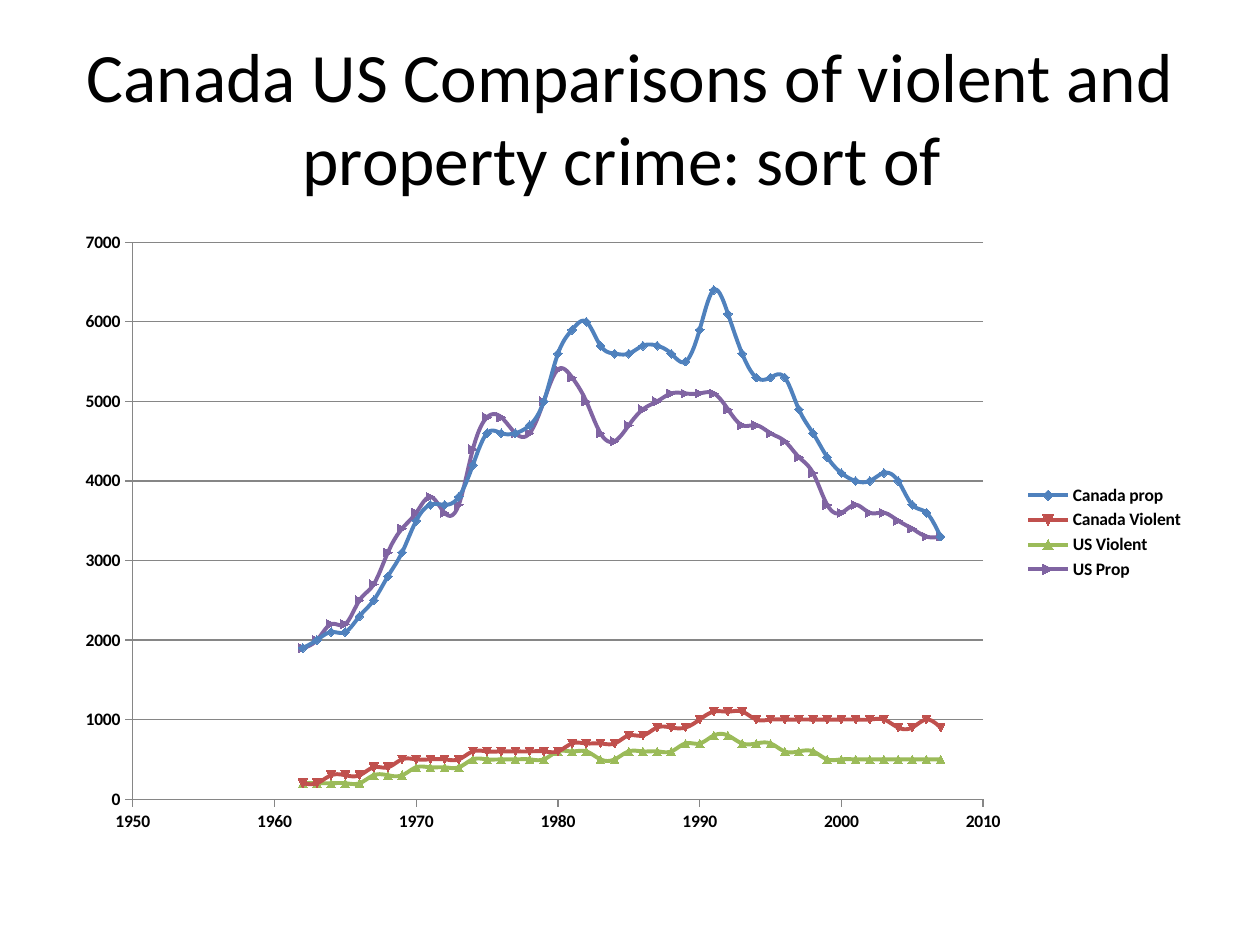
import pptx
import pptx.chart.data
import pptx.dml.color
import pptx.enum.chart
import pptx.enum.text
import pptx.util
from lxml import etree

WIDTH, HEIGHT = pptx.util.Inches(10), pptx.util.Inches(7.5)
MARGIN = 0.05
FONT = "Calibri"
FIRST_YEAR = 1962
CRIME_RATES = {
    "Canada prop": ("4F81BD", [
        1900, 2000, 2100, 2100, 2300, 2500, 2800, 3100, 3500, 3700, 3700, 3800,
        4200, 4600, 4600, 4600, 4700, 5000, 5600, 5900, 6000, 5700, 5600, 5600,
        5700, 5700, 5600, 5500, 5900, 6400, 6100, 5600, 5300, 5300, 5300, 4900,
        4600, 4300, 4100, 4000, 4000, 4100, 4000, 3700, 3600, 3300]),
    "Canada Violent": ("C0504D", [
        200, 200, 300, 300, 300, 400, 400, 500, 500, 500, 500, 500,
        600, 600, 600, 600, 600, 600, 600, 700, 700, 700, 700, 800,
        800, 900, 900, 900, 1000, 1100, 1100, 1100, 1000, 1000, 1000, 1000,
        1000, 1000, 1000, 1000, 1000, 1000, 900, 900, 1000, 900]),
    "US Violent": ("9BBB59", [
        200, 200, 200, 200, 200, 300, 300, 300, 400, 400, 400, 400,
        500, 500, 500, 500, 500, 500, 600, 600, 600, 500, 500, 600,
        600, 600, 600, 700, 700, 800, 800, 700, 700, 700, 600, 600,
        600, 500, 500, 500, 500, 500, 500, 500, 500, 500]),
    "US Prop": ("8064A2", [
        1900, 2000, 2200, 2200, 2500, 2700, 3100, 3400, 3600, 3800, 3600, 3700,
        4400, 4800, 4800, 4600, 4600, 5000, 5400, 5300, 5000, 4600, 4500, 4700,
        4900, 5000, 5100, 5100, 5100, 5100, 4900, 4700, 4700, 4600, 4500, 4300,
        4100, 3700, 3600, 3700, 3600, 3600, 3500, 3400, 3300, 3300]),
}


def paint(target, color):
    target.solid()
    target.fore_color.rgb = pptx.dml.color.RGBColor.from_string(color)


def add_text(slide, text, left, top, width, height, size, color):
    shape = slide.shapes.add_textbox(
        int(left * WIDTH), int(top * HEIGHT), int(width * WIDTH), int(height * HEIGHT))
    frame = shape.text_frame
    frame.word_wrap = True
    frame.vertical_anchor = pptx.enum.text.MSO_ANCHOR.MIDDLE
    paragraph = frame.paragraphs[0]
    paragraph.alignment = pptx.enum.text.PP_ALIGN.CENTER
    run = paragraph.add_run()
    run.text = text
    run.font.name = FONT
    run.font.size = pptx.util.Pt(size)
    paint(run.font.fill, color)


presentation = pptx.Presentation()
presentation.slide_width, presentation.slide_height = WIDTH, HEIGHT
slide = presentation.slides.add_slide(presentation.slide_layouts[6])

add_text(slide, "Canada US Comparisons of violent and property crime: sort of ",
         left=MARGIN, top=0.04, width=1 - 2 * MARGIN, height=1 / 6,
         size=39.6, color="000000")

data = pptx.chart.data.XyChartData(number_format="General")
for name, (color, rates) in CRIME_RATES.items():
    points = data.add_series(name)
    for year, rate in enumerate(rates, FIRST_YEAR):
        points.add_data_point(year, rate)

chart = slide.shapes.add_chart(
    pptx.enum.chart.XL_CHART_TYPE.XY_SCATTER_SMOOTH,
    int(MARGIN * WIDTH), int(HEIGHT * 7 / 30),
    int((1 - 2 * MARGIN) * WIDTH), int(0.66 * HEIGHT), data).chart
chart.has_title = False
chart.font.name = FONT
chart.font.size = pptx.util.Pt(10)
chart.font.bold = True
paint(chart.font.fill, "000000")
chart.has_legend = True
chart.legend.position = pptx.enum.chart.XL_LEGEND_POSITION.RIGHT
chart.legend.include_in_layout = False

plot = chart.plots[0]
plot.vary_by_categories = False
for series, (color, rates) in zip(plot.series, CRIME_RATES.values()):
    paint(series.format.line.fill, color)
    series.format.line.width = pptx.util.Pt(2.25)
    paint(series.marker.format.fill, color)
    paint(series.marker.format.line.fill, color)

for axis, low, high, step in ((chart.category_axis, 1950, 2010, 10),
                              (chart.value_axis, 0, 7000, 1000)):
    axis.minimum_scale, axis.maximum_scale, axis.major_unit = low, high, step
    axis.major_tick_mark = pptx.enum.chart.XL_TICK_MARK.OUTSIDE
    axis.minor_tick_mark = pptx.enum.chart.XL_TICK_MARK.NONE
    axis.tick_labels.number_format = "General"
    axis.tick_labels.number_format_is_linked = False
    paint(axis.format.line.fill, "868686")
    axis.format.line.width = pptx.util.Pt(0.75)
chart.category_axis.has_major_gridlines = False
chart.value_axis.has_major_gridlines = True
gridline = chart.value_axis.major_gridlines.format.line
paint(gridline.fill, "868686")
gridline.width = pptx.util.Pt(0.75)

plot_area = chart.element.find(".//{*}plotArea")
namespace = etree.QName(plot_area).namespace
for series in plot_area.findall(".//{*}ser"):
    for existing in series.findall("{*}smooth"):
        series.remove(existing)
    etree.SubElement(series, f"{{{namespace}}}smooth", val="1")
for existing in plot_area.findall("{*}layout"):
    plot_area.remove(existing)
layout = etree.Element(f"{{{namespace}}}layout")
plot_area.insert(0, layout)
manual = etree.SubElement(layout, f"{{{namespace}}}manualLayout")
for tag, value in (("layoutTarget", "inner"), ("xMode", "edge"), ("yMode", "edge"),
                   ("x", 0.0615), ("y", 0.035), ("w", 0.75), ("h", 0.893)):
    etree.SubElement(manual, f"{{{namespace}}}{tag}", val=str(value))

presentation.save("out.pptx")
